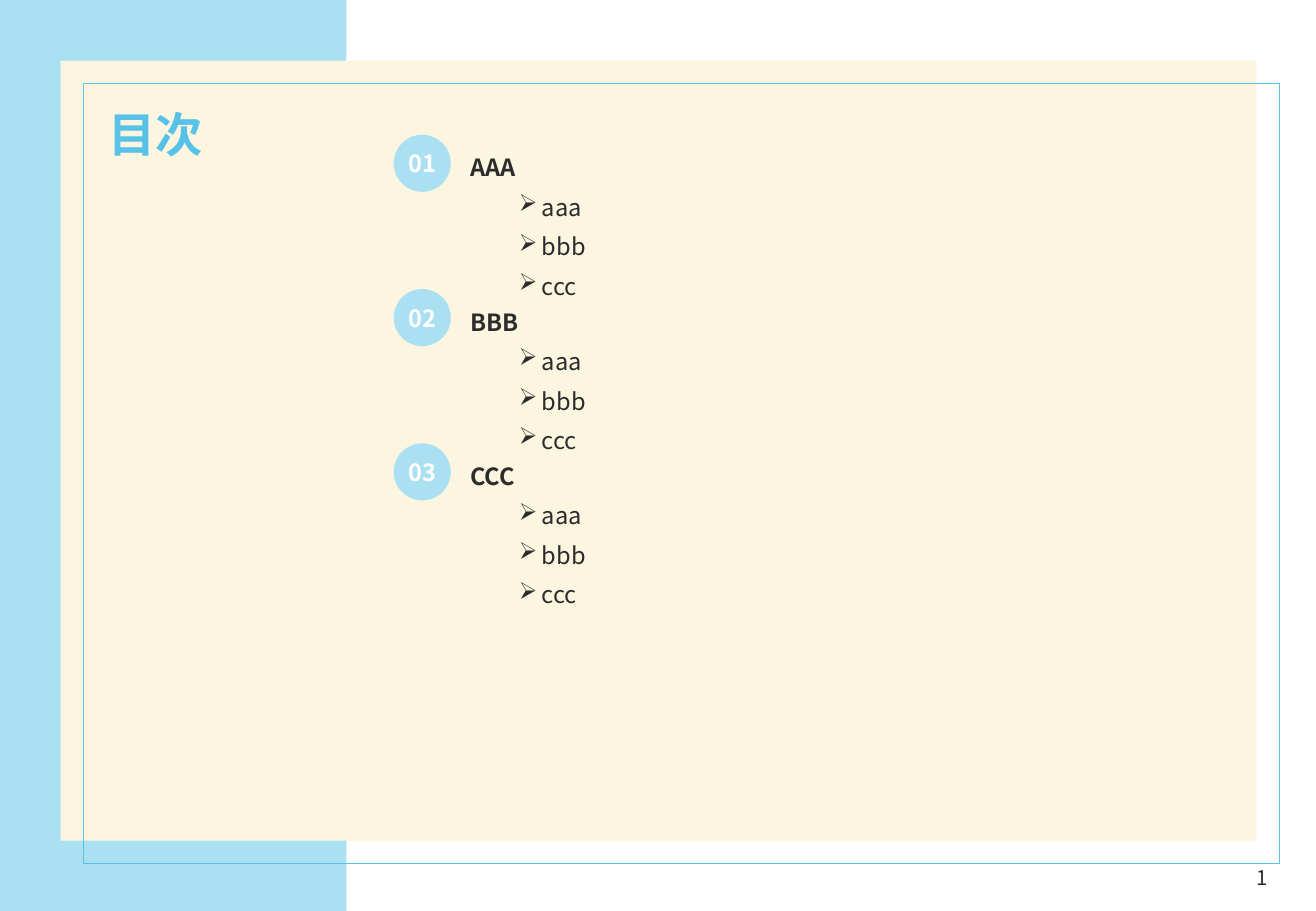
from dataclasses import dataclass

from lxml import etree
from pptx import Presentation
from pptx.dml.color import RGBColor
from pptx.enum import shapes, text
from pptx.oxml import ns
from pptx.util import Inches, Pt


@dataclass(frozen=True)
class Theme:
    """Colours, typeface and type sizes of the deck."""
    font: str = "Noto Sans CJK JP"
    sky: str = "ABE0F3"
    accent: str = "57C1E7"
    cream: str = "FCF6E0"
    ink: str = "2C2C2C"
    white: str = "FFFFFF"
    title: int = 28
    body: int = 14
    small: int = 12


T = Theme()
PLAIN_TABLE = "{2D5ABB26-0587-4C30-8999-92F81FD0307C}"
ALIGN, ANCHOR = text.PP_ALIGN, text.MSO_ANCHOR
ITEMS = ("aaa", "bbb", "ccc")
SECTIONS = [("AAA", ITEMS), ("BBB", ITEMS), ("CCC", ITEMS)]


def write(p, words, size=T.body, color=T.ink, bold=False, align=ALIGN.LEFT,
          line=None, before=None, bullet=None, indent=(0, 0)):
    """Put one formatted run into a paragraph."""
    p.alignment, p.line_spacing = align, line
    if before is not None:
        p.space_before = Pt(before)
    pPr = p._p.get_or_add_pPr()
    if bullet:
        pPr.set("marL", str(Inches(indent[0])))
        pPr.set("indent", str(Inches(indent[1])))
        etree.SubElement(pPr, ns.qn("a:buChar")).set("char", bullet)
    r = p.add_run()
    r.text = words
    r.font.name, r.font.size, r.font.bold = T.font, Pt(size), bold
    r.font.color.rgb = RGBColor.from_string(color)
    etree.SubElement(r._r.get_or_add_rPr(), ns.qn("a:ea")).set("typeface", T.font)


def set_frame(tf, insets, wrap):
    """Set the insets, wrapping and middle anchor of a text frame."""
    tf.margin_left, tf.margin_top, tf.margin_right, tf.margin_bottom = map(Inches, insets)
    tf.word_wrap, tf.vertical_anchor = wrap, ANCHOR.MIDDLE


def add_label(s, box, words, insets, wrap=True, **fmt):
    """Add a text box holding one paragraph."""
    tf = s.shapes.add_textbox(*map(Inches, box)).text_frame
    set_frame(tf, insets, wrap)
    write(tf.paragraphs[0], words, **fmt)


def add_panel(s, box, kind=shapes.MSO_SHAPE.RECTANGLE, fill=None, line=None):
    """Add a flat shape with an optional fill and outline."""
    sp = s.shapes.add_shape(kind, *map(Inches, box))
    sp.shadow.inherit = False
    if fill:
        sp.fill.solid()
        sp.fill.fore_color.rgb = RGBColor.from_string(fill)
    else:
        sp.fill.background()
    if line:
        sp.line.color.rgb = RGBColor.from_string(line)
        sp.line.width = Pt(0.75)
    else:
        sp.line.fill.background()
    return sp


def add_backdrop(s, box):
    """Draw the side band, the card, its offset frame and the page number."""
    x, y, w, h = box
    margin, offset = 0.5, 0.19
    card_w, card_h = w - 0.99, h - 1.08
    add_panel(s, (x, y, 2.85, h), fill=T.sky)
    add_panel(s, (x + margin, y + margin, card_w, card_h), fill=T.cream)
    add_label(s, (x + w - 0.64, y + h - 0.38, 0.43, 0.24), "1", (0, 0.05, 0.04, 0.05),
              wrap=False, size=T.small, align=ALIGN.CENTER, line=0.9, before=10)
    add_panel(s, (x + margin + offset, y + margin + offset, card_w, card_h), line=T.accent)


def add_contents(s, box, sections):
    """List the sections in a plain table."""
    x, y, w, row_h = box
    frame = s.shapes.add_table(len(sections), 1, *map(Inches, (x, y, w, row_h * len(sections))))
    tbl = frame.table
    tbl.first_row = tbl.horz_banding = False
    tbl._tbl.tblPr.find(ns.qn("a:tableStyleId")).text = PLAIN_TABLE
    for i, (heading, items) in enumerate(sections):
        cell = tbl.cell(i, 0)
        cell.fill.background()
        cell.margin_left = cell.margin_right = Inches(0.02)
        cell.margin_top = cell.margin_bottom = Inches(0.02)
        tf = cell.text_frame
        write(tf.paragraphs[0], heading, bold=True, align=ALIGN.JUSTIFY, before=3)
        for item in items:
            write(tf.add_paragraph(), item, align=ALIGN.JUSTIFY, before=3,
                  bullet="➢", indent=(0.59, -0.19))


def add_badges(s, box, count, step):
    """Stack numbered discs at an even step."""
    x, y, w, h = box
    for i in range(count):
        sp = add_panel(s, (x, y + i * step, w, h), shapes.MSO_SHAPE.OVAL, fill=T.sky)
        set_frame(sp.text_frame, (0.12, 0, 0.12, 0), False)
        write(sp.text_frame.paragraphs[0], f"{i + 1:02}", color=T.white,
              bold=True, align=ALIGN.CENTER)


def add_agenda_slide(prs, box, title, sections):
    """Build the table-of-contents slide."""
    s = prs.slides.add_slide(prs.slide_layouts[6])
    x, y = box[:2]
    row_h = 1.27
    add_backdrop(s, box)
    add_label(s, (x + 0.77, y + 0.75, 3.65, 0.76), title, (0.12, 0.05, 0.12, 0.05),
              size=T.title, color=T.accent, bold=True, line=0.9)
    add_contents(s, (x + 3.85, y + 1.21, 4.83, row_h), sections)
    add_badges(s, (x + 3.24, y + 1.11, 0.47, 0.47), len(sections), row_h)


def main():
    """Create and save the deck."""
    prs = Presentation()
    w, h = 10.83, 7.5
    prs.slide_width, prs.slide_height = Inches(w), Inches(h)
    add_agenda_slide(prs, (0, 0, w, h), "目次", SECTIONS)
    prs.save("out.pptx")


if __name__ == "__main__":
    main()
